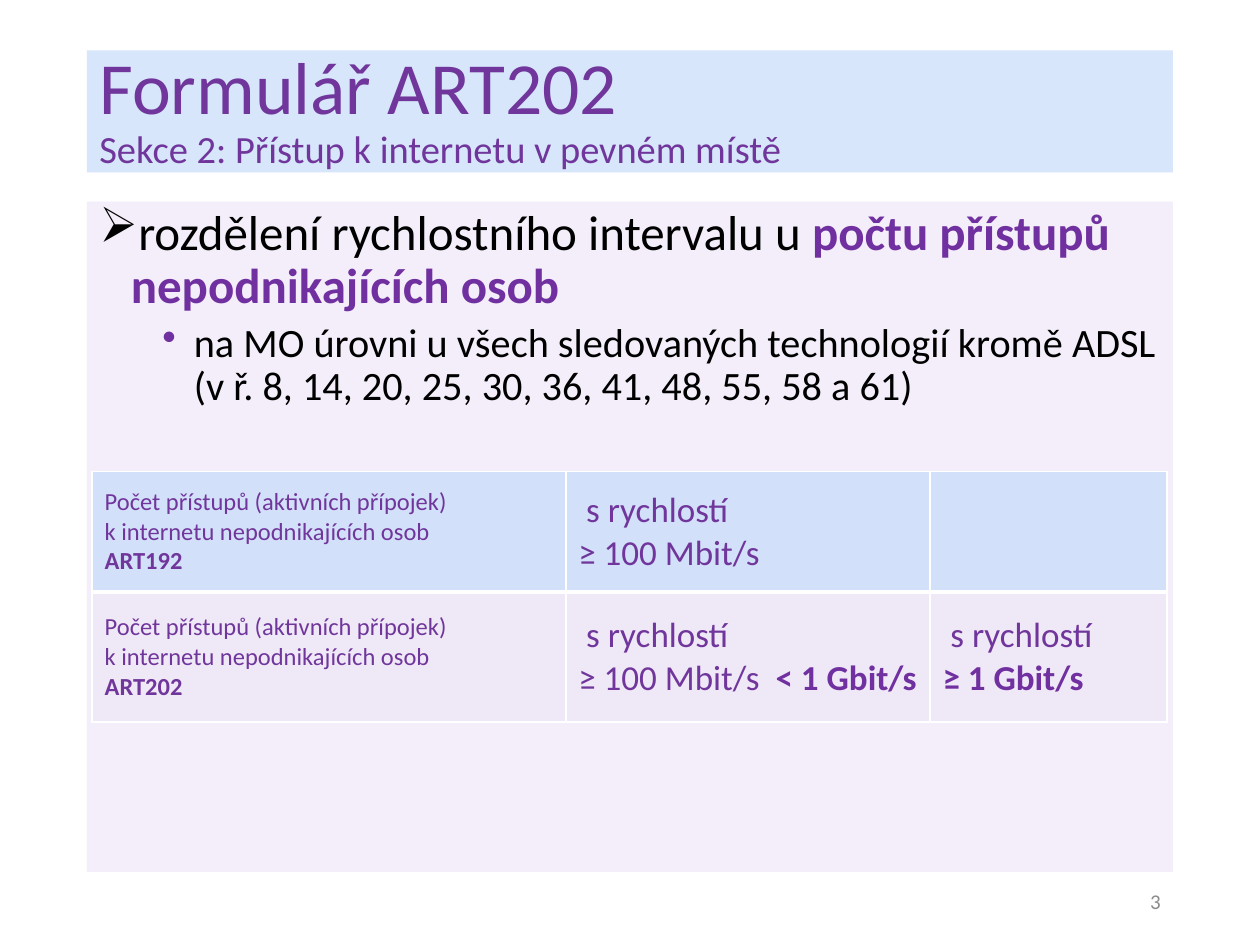
from dataclasses import dataclass

from lxml import etree
from pptx import Presentation
from pptx.dml import color
from pptx.enum import shapes, text
from pptx.oxml import ns
from pptx.util import Pt


@dataclass(frozen=True)
class Theme:
    font: str = "Calibri"
    black: str = "000000"
    white: str = "FFFFFF"
    grey: str = "8C8C8C"
    purple: str = "70369B"
    accent: str = "7030A0"
    blue_fill: str = "C2D9FA"
    lilac_fill: str = "EEE5F7"
    opacity: int = 65
    title: int = 42
    subtitle: int = 22
    body: int = 28
    sub_body: int = 23
    speed: int = 20
    label: int = 14
    number: int = 12


T = Theme()
LEFT, WIDTH = 49.7, 620.6


def sub(parent, tag, **attrs):
    return etree.SubElement(parent, ns.qn(tag), attrs)


def tint(fill, parent, rgb):
    """Solid fill with the theme's opacity; parent holds the fill element."""
    fill.solid()
    fill.fore_color.rgb = color.RGBColor.from_string(rgb)
    clr = parent.find(ns.qn("a:solidFill")).find(ns.qn("a:srgbClr"))
    sub(clr, "a:alpha", val=str(T.opacity * 1000))


def add_run(p, words, size, rgb=T.purple, bold=False):
    r = p.add_run()
    r.text = words
    r.font.name, r.font.size, r.font.bold = T.font, Pt(size), bold
    r.font.color.rgb = color.RGBColor.from_string(rgb)


def add_text(tf, *runs, bullet=None, bullet_rgb=None, indent=0, level=0,
             align=text.PP_ALIGN.LEFT, spacing=None, before=None):
    """Add one paragraph; each run is (words, size, colour, bold)."""
    p = tf.paragraphs[0]
    if p.runs:
        p = tf.add_paragraph()
    p.level = level
    if bullet:
        ppr = p._p.get_or_add_pPr()
        ppr.set("marL", str(Pt(indent)))
        ppr.set("indent", str(-Pt(18)))
        if bullet_rgb:
            sub(sub(ppr, "a:buClr"), "a:srgbClr", val=bullet_rgb)
        sub(ppr, "a:buChar", char=bullet)
    p.alignment = align
    if spacing:
        p.line_spacing = spacing
    if before is not None:
        p.space_before = Pt(before)
    for run in runs:
        add_run(p, *run)


def add_panel(s, top, height, rgb, anchor):
    sp = s.shapes.add_shape(shapes.MSO_SHAPE.RECTANGLE,
                            Pt(LEFT), Pt(top), Pt(WIDTH), Pt(height))
    sp.shadow.inherit = False
    sp.line.fill.background()
    tint(sp.fill, sp._element.spPr, rgb)
    tf = sp.text_frame
    tf.word_wrap = True
    tf.vertical_anchor = anchor
    return tf


def set_borders(cell, **widths):
    tcpr = cell._tc.get_or_add_tcPr()
    for i, side in enumerate("LRTB"):
        ln = etree.Element(ns.qn(f"a:ln{side}"), w=str(Pt(widths.get(side, 1))))
        sub(sub(ln, "a:solidFill"), "a:srgbClr", val=T.white)
        tcpr.insert(i, ln)


def add_speed_table(s, rows):
    widths, heights = (270.7, 208.1, 135.4), (69.1, 74.2)
    table = s.shapes.add_table(len(rows), len(widths), Pt(52.6), Pt(269.3),
                               Pt(sum(widths)), Pt(sum(heights))).table
    for col, width in zip(table.columns, widths):
        col.width = Pt(width)
    for i, (rgb, borders, cells) in enumerate(rows):
        table.rows[i].height = Pt(heights[i])
        for j, paragraphs in enumerate(cells):
            cell = table.cell(i, j)
            cell.vertical_anchor = text.MSO_ANCHOR.MIDDLE
            tint(cell.fill, cell._tc.get_or_add_tcPr(), rgb)
            set_borders(cell, **borders)
            for runs in paragraphs:
                add_text(cell.text_frame, *runs)


def form_label(code):
    return [[("Počet přístupů (aktivních přípojek) k\u00a0internetu nepodnikajících osob", T.label)],
            [(code, T.label, T.purple, True)]]


def speed(*runs):
    return [[(" s rychlostí", T.speed)], runs]


def main():
    prs = Presentation()
    prs.slide_width, prs.slide_height = Pt(720), Pt(540)
    s = prs.slides.add_slide(prs.slide_layouts[6])

    # Slide number
    tf = s.shapes.add_textbox(Pt(508.3), Pt(500.4), Pt(162), Pt(28.8)).text_frame
    tf.word_wrap = True
    tf.vertical_anchor = text.MSO_ANCHOR.MIDDLE
    add_text(tf, ("3", T.number, T.grey), align=text.PP_ALIGN.RIGHT)

    # Body
    tf = add_panel(s, 115.2, 383, T.lilac_fill, text.MSO_ANCHOR.TOP)
    add_text(tf, ("rozdělení rychlostního intervalu u ", T.body, T.black),
             ("počtu přístupů nepodnikajících osob", T.body, T.accent, True),
             bullet="➢", indent=18, spacing=0.9)
    add_text(tf, ("na MO úrovni u všech sledovaných technologií kromě ADSL "
                  "(v\u00a0ř. 8, 14, 20, 25, 30, 36, 41, 48, 55, 58 a 61)",
                  T.sub_body, T.black),
             bullet="•", bullet_rgb=T.accent, indent=54, level=1,
             spacing=0.9, before=5)

    # Title
    tf = add_panel(s, 28.8, 69.8, T.blue_fill, text.MSO_ANCHOR.MIDDLE)
    add_text(tf, ("Formulář ART202", T.title), spacing=0.9)
    add_text(tf, ("Sekce 2: Přístup k internetu v pevném místě", T.subtitle),
             spacing=0.9)

    # Comparison of the two forms
    add_speed_table(s, [
        (T.blue_fill, {"B": 3}, [
            form_label("ART192"),
            speed(("≥ 100 Mbit/s", T.speed)),
            []]),
        (T.lilac_fill, {"T": 3}, [
            form_label("ART202"),
            speed(("≥ 100 Mbit/s  ", T.speed),
                  ("< 1 Gbit/s", T.speed, T.accent, True)),
            speed(("≥ 1 Gbit/s", T.speed, T.accent, True))]),
    ])

    prs.save("out.pptx")


if __name__ == "__main__":
    main()
